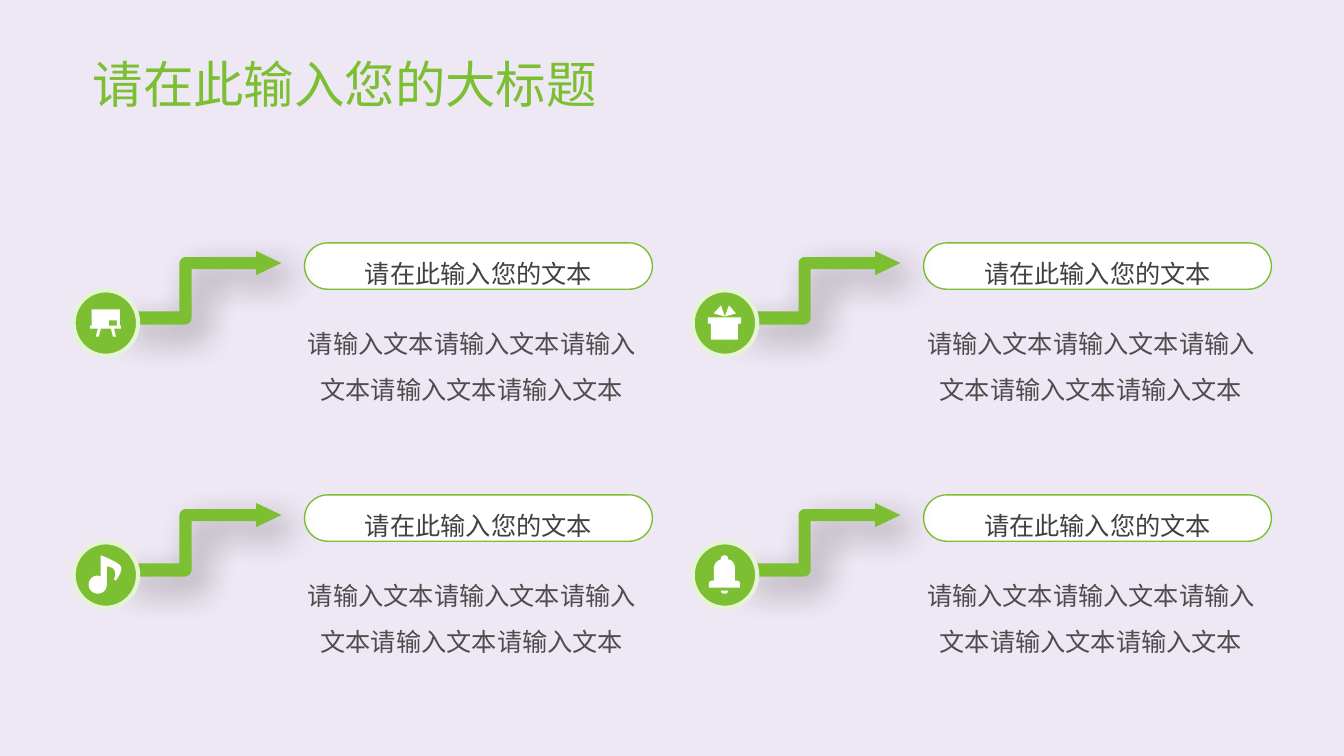
import lxml.etree
import pptx
import pptx.dml.color
import pptx.enum.shapes
import pptx.enum.text
import pptx.oxml.ns
import pptx.util

TITLE = "请在此输入您的大标题"
HEAD = "请在此输入您的文本"
BODY = "请输入文本请输入文本请输入文本请输入文本请输入文本"

# PLACEHOLDER
ARROW = [[(206, -27), (181, -15), (181, -21), (117, -21), (117, 27),
          (117, 31, 114, 34, 110, 34), (44, 34), (44, 21), (105, 21), (105, -27),
          (105, -30, 108, -33, 111, -33), (181, -33), (181, -39)]]
BOARD = [[(47, 35), (46, 35), (46, 19), (18, 19), (18, 35), (16, 35), (16, 38), (24, 38),
          (22, 46), (25, 46), (27, 38), (37, 38), (39, 46), (42, 46), (40, 38), (47, 38)],
         [(43, 35), (35, 35), (35, 30), (43, 30)]]
GIFT = [[(28, 15), (21, 23), (32, 26)],
        [(15, 27), (15, 33), (18, 33), (18, 49), (45, 49), (45, 33), (48, 33), (48, 27)],
        [(36, 15), (32, 26), (43, 23)]]
NOTE = [[(24, 33), (25, 33, 26, 34, 27, 34), (27, 13), (27, 13, 44, 19, 47, 24),
         (49, 29, 42, 38, 42, 38), (40, 37), (40, 37, 43, 30, 40, 27),
         (39, 25, 35, 24, 33, 24), (33, 42), (33, 47, 29, 51, 24, 51),
         (19, 51, 15, 47, 15, 42), (15, 37, 19, 33, 24, 33)]]
BELL = [[(28, 48), (35, 48), (35, 50, 34, 51, 32, 51), (30, 51, 28, 50, 28, 48)],
        [(32, 13), (34, 13, 35, 14, 35, 16), (35, 17), (36, 17), (40, 18, 42, 22, 42, 26),
         (42, 35), (42, 36, 42, 37, 42, 38), (43, 38), (45, 38, 47, 39, 47, 41), (47, 44),
         (47, 45, 47, 45, 46, 45), (17, 45), (16, 45, 16, 45, 16, 44), (16, 41),
         (16, 39, 18, 38, 20, 38), (21, 38), (21, 37, 21, 36, 21, 35), (21, 26),
         (21, 22, 24, 18, 28, 17), (28, 16), (28, 14, 30, 13, 32, 13)]]

ITEMS = [(BOARD, HEAD, BODY), (GIFT, HEAD, BODY), (NOTE, HEAD, BODY), (BELL, HEAD, BODY)]

THEME = {
    "font": "Noto Sans CJK SC",
    "back": "EEE8F4", "green": "7CBF33", "ring": "E5F4D5", "white": "FFFFFF",
    "head": "404040", "body": "4D4D4D", "shade": "000000",
    "big": 36, "small": 18,
}
LEFT, TOP = 0.73, 2.88
STEP_X, STEP_Y = 6.14, 2.5
COLS = 2
CURVE_STEPS = 8

Inches = pptx.util.Inches
Shape = pptx.enum.shapes.MSO_SHAPE
Align = pptx.enum.text.PP_ALIGN


def tint(name):
    return pptx.dml.color.RGBColor.from_string(THEME[name])


def paint(shape, fill, line=None, width=0):
    shape.shadow.inherit = False
    shape.fill.solid()
    shape.fill.fore_color.rgb = tint(fill)
    if line:
        shape.line.color.rgb = tint(line)
        shape.line.width = pptx.util.Pt(width)
    else:
        shape.line.fill.background()


def write(shape, text, size, color, space, align):
    frame = shape.text_frame
    frame.word_wrap = True
    frame.vertical_anchor = pptx.enum.text.MSO_ANCHOR.MIDDLE
    para = frame.paragraphs[0]
    para.alignment = align
    para.line_spacing = space
    run = para.add_run()
    run.text = text
    run.font.size = pptx.util.Pt(THEME[size])
    run.font.color.rgb = tint(color)
    run.font.name = THEME["font"]
    east = lxml.etree.SubElement(run.font._element, pptx.oxml.ns.qn("a:ea"))
    east.set("typeface", THEME["font"])


def trace(ring):
    spots = []
    for part in ring:
        if len(part) == 2:
            spots.append(part)
            continue
        ends = [spots[-1], part[:2], part[2:4], part[4:]]
        for step in range(1, CURVE_STEPS + 1):
            t = step / CURVE_STEPS
            parts = ((1 - t) ** 3, 3 * t * (1 - t) ** 2, 3 * t * t * (1 - t), t ** 3)
            spots.append(tuple(sum(w * p[k] for w, p in zip(parts, ends)) for k in (0, 1)))
    return [(x * 100, y * 100) for x, y in spots]


def draw(shapes, rings, x, y, fill):
    lines = [trace(ring) for ring in rings]
    pen = shapes.build_freeform(*lines[0][0], scale=Inches(1) / 10000)
    for i, spots in enumerate(lines):
        if i:
            pen.move_to(*spots[0])
        pen.add_line_segments(spots[1:], close=True)
    shape = pen.convert_to_shape(Inches(x), Inches(y))
    paint(shape, fill)
    return shape


def shade(shape):
    qn = pptx.oxml.ns.qn
    effect = shape._element.spPr.find(qn("a:effectLst"))
    outer = lxml.etree.SubElement(effect, qn("a:outerShdw"), {
        "blurRad": str(pptx.util.Pt(25)), "dist": str(pptx.util.Pt(13)),
        "dir": str(45 * 60000), "algn": "tl", "rotWithShape": "0"})
    color = lxml.etree.SubElement(outer, qn("a:srgbClr"), {"val": THEME["shade"]})
    lxml.etree.SubElement(color, qn("a:alpha"), {"val": "40000"})


def box(x, y, w, h):
    return Inches(x), Inches(y), Inches(w), Inches(h)


def main():
    deck = pptx.Presentation()
    deck.slide_width, deck.slide_height = Inches(13.33), Inches(7.5)
    slide = deck.slides.add_slide(deck.slide_layouts[6])
    slide.background.fill.solid()
    slide.background.fill.fore_color.rgb = tint("back")
    shapes = slide.shapes

    title = shapes.add_textbox(*box(0.82, 0.4, 11.31, 0.93))
    write(title, TITLE, "big", "green", 0.9, Align.LEFT)

    for i, (icon, head, body) in enumerate(ITEMS):
        row, col = divmod(i, COLS)
        x, y = LEFT + col * STEP_X, TOP + row * STEP_Y

        pill = shapes.add_shape(Shape.ROUNDED_RECTANGLE, *box(x + 2.29, y - 0.47, 3.45, 0.46))
        pill.adjustments[0] = 0.5
        paint(pill, "white", "green", 1)
        write(pill, head, "small", "head", 1.5, Align.CENTER)

        shade(draw(shapes, ARROW, x, y, "green"))
        disc = shapes.add_shape(Shape.OVAL, *box(x, y, 0.64, 0.65))
        paint(disc, "green", "ring", 3)
        draw(shapes, icon, x, y, "white")

        note = shapes.add_textbox(*box(x + 2.18, y + 0.14, 3.54, 1.08))
        write(note, body, "small", "body", 1.5, Align.CENTER)

    deck.save("out.pptx")


if __name__ == "__main__":
    main()
